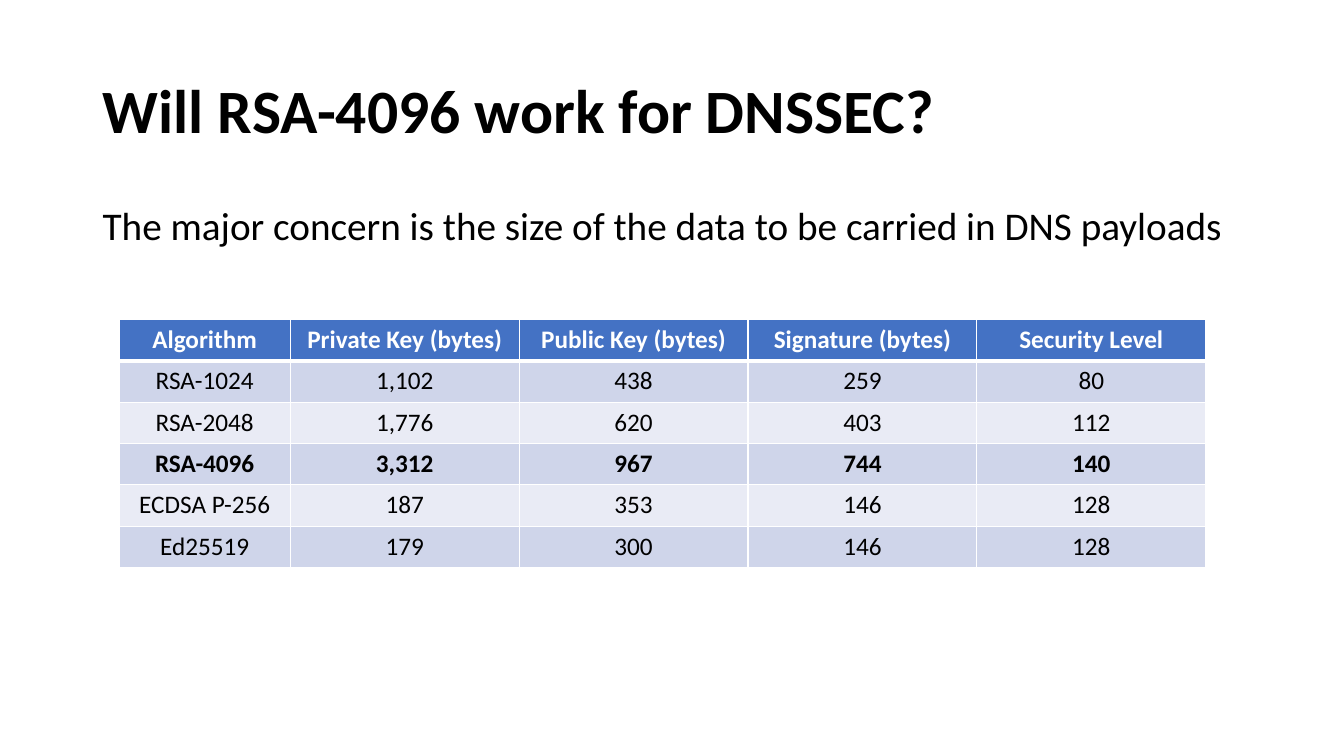
from lxml import etree
from pptx import Presentation
from pptx.dml.color import RGBColor
from pptx.enum.text import MSO_ANCHOR, MSO_AUTO_SIZE, PP_ALIGN
from pptx.oxml.ns import qn
from pptx.util import Inches, Pt

LEFT, CENTER = PP_ALIGN.LEFT, PP_ALIGN.CENTER
TOP, MIDDLE = MSO_ANCHOR.TOP, MSO_ANCHOR.MIDDLE
NO_FIT = MSO_AUTO_SIZE.NONE

FONT = "Calibri"
BLACK = RGBColor(0x00, 0x00, 0x00)
WHITE = RGBColor(0xFF, 0xFF, 0xFF)
BLUE = RGBColor(0x44, 0x72, 0xC4)
BANDS = (RGBColor(0xE9, 0xEB, 0xF5), RGBColor(0xCF, 0xD5, 0xEA))

# Slide size, text margin and table grid, in inches
WIDE, HIGH = 13.33, 7.5
EDGE, SPAN = 0.92, 11.5
COLS = (1.7,) + (2.27,) * 4
ROW = 0.41

ROWS = (
    ("Algorithm", "Private Key (bytes)", "Public Key (bytes)",
     "Signature (bytes)", "Security Level"),
    ("RSA-1024", "1,102", "438", "259", "80"),
    ("RSA-2048", "1,776", "620", "403", "112"),
    ("RSA-4096", "3,312", "967", "744", "140"),
    ("ECDSA P-256", "187", "353", "146", "128"),
    ("Ed25519", "179", "300", "146", "128"),
)
FOCUS = "RSA-4096"


def write(frame, text, size, color=BLACK, bold=False, align=LEFT):
    """Set one paragraph of text and format it."""
    frame.text = text
    para = frame.paragraphs[0]
    para.alignment = align
    for run in para.runs:
        font = run.font
        font.name, font.size, font.bold = FONT, Pt(size), bold
        font.color.rgb = color
    return para


def place(shape, top, height, anchor):
    """Set a text shape between the side margins."""
    shape.left, shape.top = Inches(EDGE), Inches(top)
    shape.width, shape.height = Inches(SPAN), Inches(height)
    frame = shape.text_frame
    frame.word_wrap, frame.auto_size = True, NO_FIT
    frame.vertical_anchor = anchor
    return frame


def add_title(slide, text):
    frame = place(slide.shapes.title, 0.4, 1.45, MIDDLE)
    write(frame, text, 44, bold=True).line_spacing = 0.9


def add_body(slide, text):
    box = slide.shapes.add_textbox(0, 0, 0, 0)
    para = write(place(box, 2, 0.98, TOP), text, 28)
    para.line_spacing, para.space_before = 0.9, Pt(10)


def add_rules(cell, top, base):
    """Draw white borders; top and base are widths in points."""
    props = cell._tc.get_or_add_tcPr()
    sides = (("L", 1), ("R", 1), ("T", top), ("B", base))
    for spot, (side, width) in enumerate(sides):
        line = etree.Element(qn(f"a:ln{side}"), w=str(Pt(width)))
        fill = etree.SubElement(line, qn("a:solidFill"))
        etree.SubElement(fill, qn("a:srgbClr"), val=str(WHITE))
        props.insert(spot, line)


def add_grid(slide):
    table = slide.shapes.add_table(
        len(ROWS), len(COLS), Inches(1.18), Inches(3.17),
        Inches(sum(COLS)), Inches(ROW * len(ROWS))).table
    for col, width in zip(table.columns, COLS):
        col.width = Inches(width)
    for r, texts in enumerate(ROWS):
        head = r == 0
        for c, text in enumerate(texts):
            cell = table.cell(r, c)
            cell.fill.solid()
            cell.fill.fore_color.rgb = BLUE if head else BANDS[r % 2]
            write(cell.text_frame, text, 18, WHITE if head else BLACK,
                  head or texts[0] == FOCUS, CENTER)
            add_rules(cell, 3 if r == 1 else 1, 3 if head else 1)


def main():
    deck = Presentation()
    deck.slide_width, deck.slide_height = Inches(WIDE), Inches(HIGH)
    slide = deck.slides.add_slide(deck.slide_layouts[5])
    add_title(slide, "Will RSA-4096 work for DNSSEC?")
    add_body(slide, "The major concern is the size of the data "
                    "to be carried in DNS payloads")
    add_grid(slide)
    deck.save("out.pptx")


if __name__ == "__main__":
    main()
